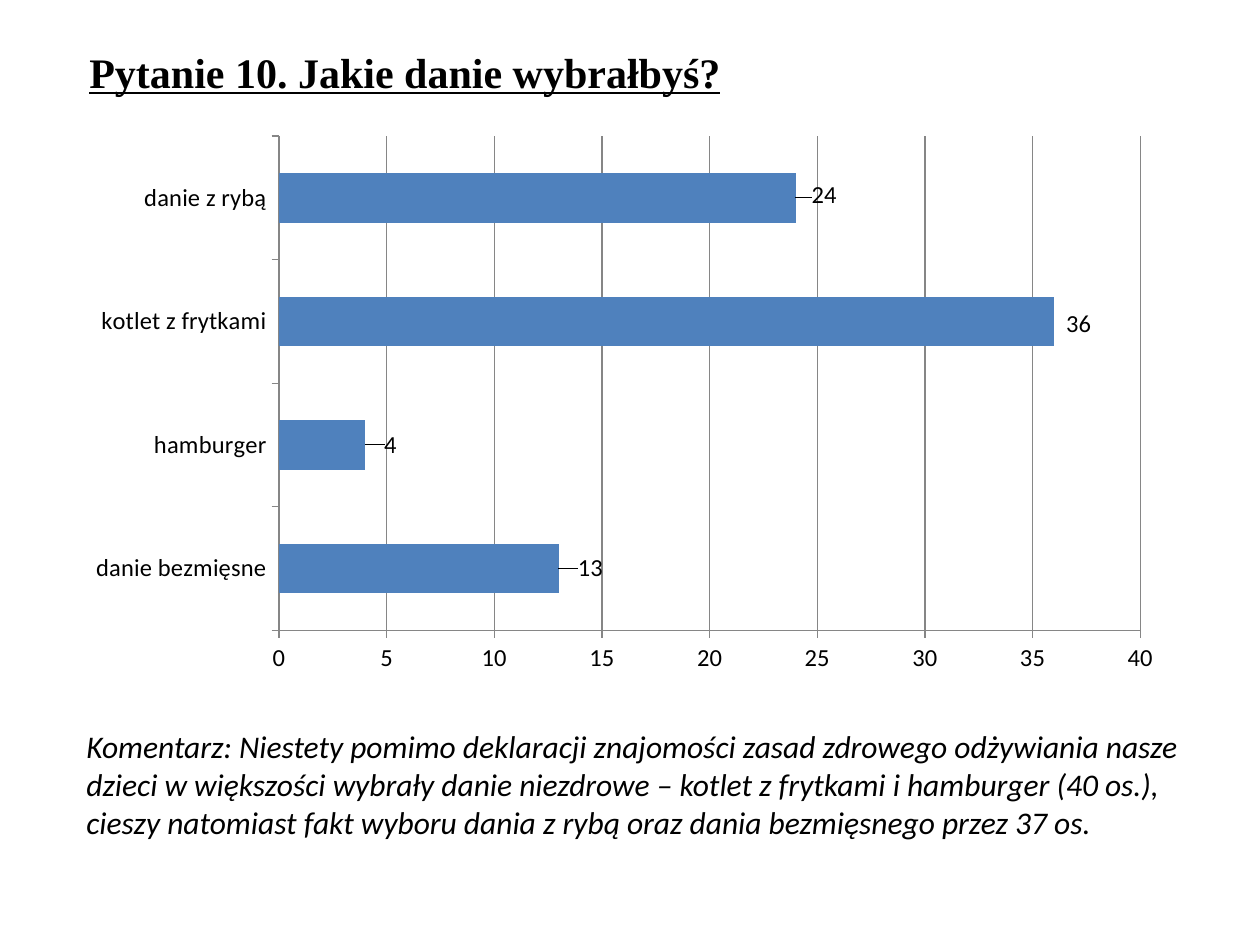
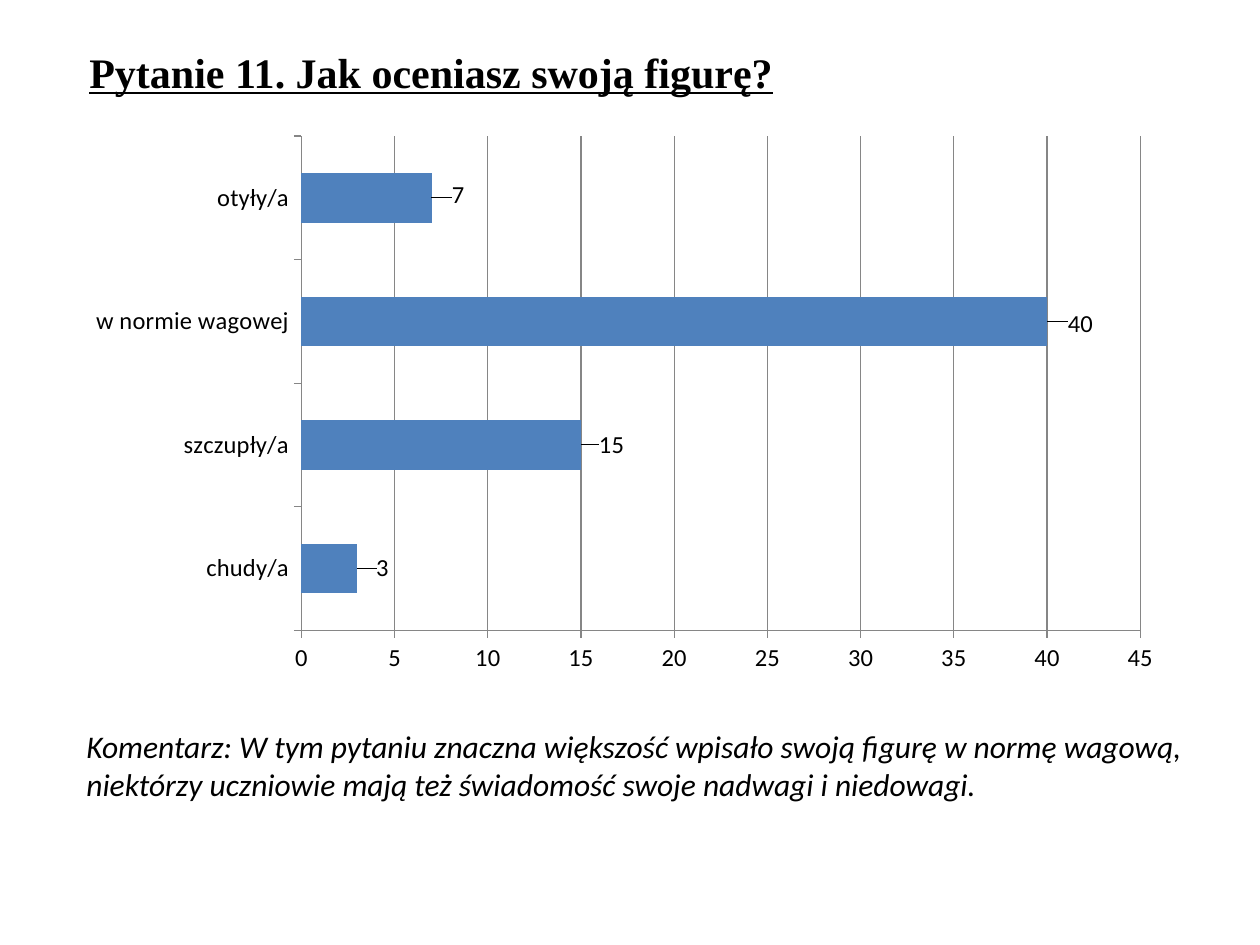
from pptx import Presentation
from pptx.chart.data import CategoryChartData
from pptx.dml.color import RGBColor
from pptx.enum.chart import XL_CHART_TYPE, XL_LABEL_POSITION, XL_TICK_MARK
from pptx.enum.text import MSO_AUTO_SIZE
from pptx.oxml import parse_xml
from pptx.oxml.ns import nsdecls
from pptx.util import Emu, Pt

COLORS = {"text": "000000", "bar": "4F81BD", "axis": "868686"}
TITLE_FONT = "Times New Roman"
BODY_FONT = "Calibri"

QUESTIONS = [
    {
        "title": "Pytanie 10. Jakie danie wybrałbyś?",
        "answers": {"danie bezmięsne": 13, "hamburger": 4,
                    "kotlet z frytkami": 36, "danie z rybą": 24},
        "label_shifts": [(14, 0), (14, 0), (7, 3), (11, -3)],
        "axis_max": 40,
        "comment": "Komentarz: Niestety pomimo deklaracji znajomości zasad zdrowego "
                   "odżywiania nasze dzieci w większości wybrały danie niezdrowe – "
                   "kotlet z frytkami i hamburger (40 os.), cieszy natomiast fakt "
                   "wyboru dania z rybą oraz dania bezmięsnego przez 37 os.",
        "comment_height": 127,
    },
    {
        "title": "Pytanie 11. Jak oceniasz swoją figurę?",
        "answers": {"chudy/a": 3, "szczupły/a": 15,
                    "w normie wagowej": 40, "otyły/a": 7},
        "label_shifts": [(14, 0), (13, 0), (16, 3), (15, -3)],
        "axis_max": 45,
        "comment": "Komentarz: W tym pytaniu znaczna większość wpisało swoją figurę "
                   "w normę wagową, niektórzy uczniowie mają też świadomość swoje "
                   "nadwagi i niedowagi.",
        "comment_height": 89,
    },
]


def px(n):
    return Emu(round(n * 914400 / 126))


def box(*lengths):
    return [px(n) for n in lengths]


def rgb(name):
    return RGBColor.from_string(COLORS[name])


def style_font(font, name, size):
    font.name = name
    font.size = Pt(size)
    font.color.rgb = rgb("text")


def add_text(s, place, text, name, size, bold=False, italic=False, underline=False):
    tf = s.shapes.add_textbox(*box(*place)).text_frame
    tf.word_wrap = True
    tf.auto_size = MSO_AUTO_SIZE.SHAPE_TO_FIT_TEXT
    r = tf.paragraphs[0].add_run()
    r.text = text
    style_font(r.font, name, size)
    r.font.bold = bold
    r.font.italic = italic
    r.font.underline = underline


def style_axis(axis):
    style_font(axis.tick_labels.font, BODY_FONT, 14)
    axis.major_tick_mark = XL_TICK_MARK.OUTSIDE
    axis.minor_tick_mark = XL_TICK_MARK.NONE
    style_line(axis.format.line)


def style_line(line):
    line.color.rgb = rgb("axis")
    line.width = Pt(0.75)


def shift_labels(chart, shifts, width, height):
    for label, (dx, dy) in zip(chart.element.xpath(".//c:dLbl"), shifts):
        layout = parse_xml(
            f'<c:layout {nsdecls("c")}><c:manualLayout>'
            f'<c:x val="{dx / width:.4f}"/><c:y val="{dy / height:.4f}"/>'
            '</c:manualLayout></c:layout>')
        label.insert(1, layout)


def add_answer_chart(s, place, answers, axis_max, shifts):
    data = CategoryChartData()
    data.categories = list(answers)
    data.add_series("Series 1", list(answers.values()))
    chart = s.shapes.add_chart(XL_CHART_TYPE.BAR_CLUSTERED, *box(*place), data).chart
    chart.has_title = False
    chart.has_legend = False
    style_font(chart.font, BODY_FONT, 18)

    style_axis(chart.category_axis)
    chart.category_axis.has_major_gridlines = False
    value_axis = chart.value_axis
    style_axis(value_axis)
    value_axis.minimum_scale = 0
    value_axis.maximum_scale = axis_max
    value_axis.major_unit = 5
    value_axis.has_major_gridlines = True
    style_line(value_axis.major_gridlines.format.line)

    plot = chart.plots[0]
    plot.gap_width = 150
    plot.vary_by_categories = False
    series = plot.series[0]
    series.format.fill.solid()
    series.format.fill.fore_color.rgb = rgb("bar")
    series.data_labels.show_value = True
    style_font(series.data_labels.font, BODY_FONT, 14)
    for i in range(len(answers)):
        label = series.points[i].data_label
        style_font(label.font, BODY_FONT, 14)
        label.position = XL_LABEL_POSITION.OUTSIDE_END
    shift_labels(chart, shifts, *place[2:])


def add_question(prs, question):
    s = prs.slides.add_slide(prs.slide_layouts[6])
    add_text(s, (77, 40, 1121, 63), question["title"], TITLE_FONT, 24,
             bold=True, underline=True)
    add_answer_chart(s, (74, 125, 1101, 559), question["answers"],
                     question["axis_max"], question["label_shifts"])
    add_text(s, (74, 721, 1121, question["comment_height"]), question["comment"],
             BODY_FONT, 18, italic=True)


def main():
    prs = Presentation()
    prs.slide_width, prs.slide_height = box(1260, 945)
    for question in QUESTIONS:
        add_question(prs, question)
    prs.save("out.pptx")


if __name__ == "__main__":
    main()
